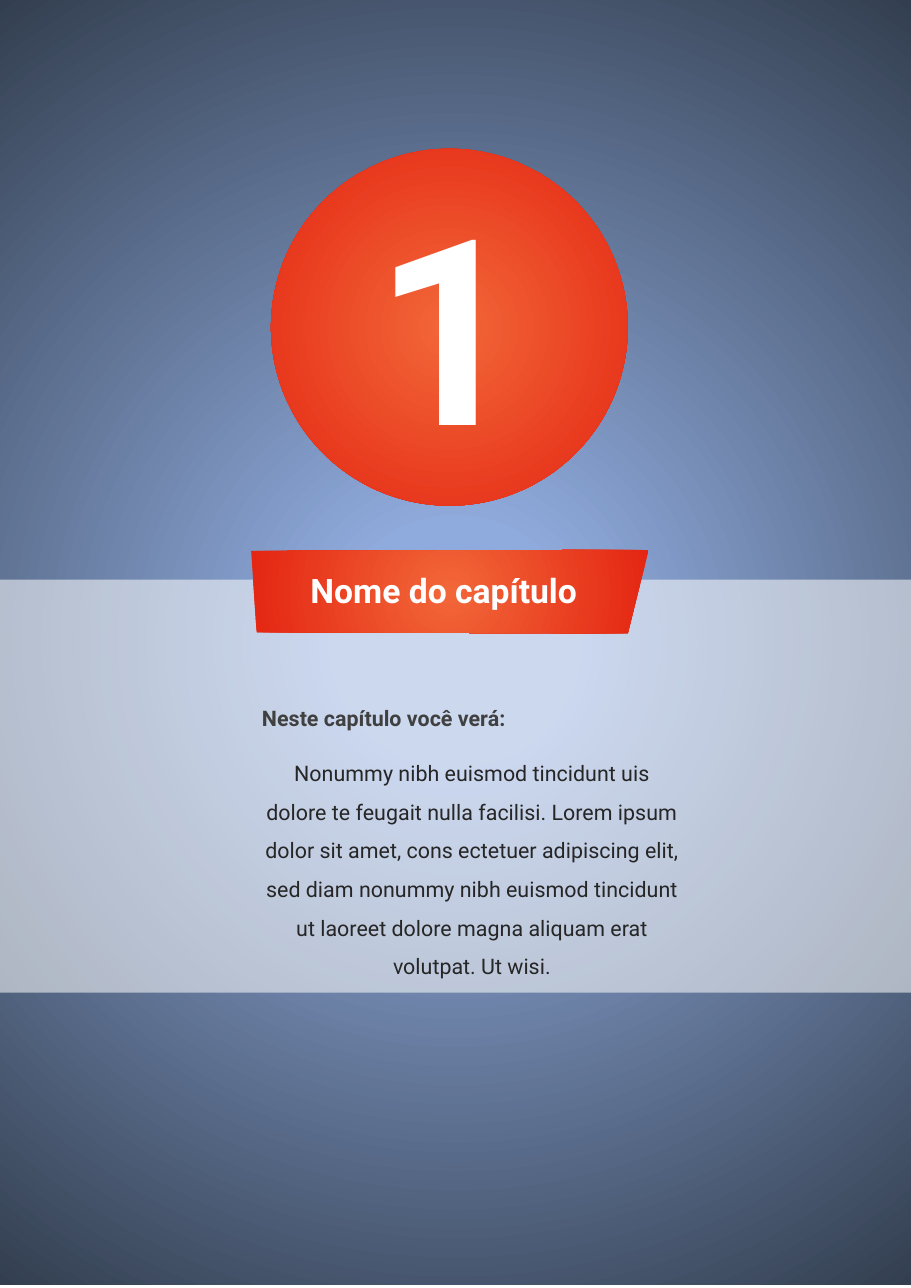
from lxml.etree import SubElement
from pptx import Presentation
from pptx.dml.color import RGBColor
from pptx.enum.shapes import MSO_SHAPE
from pptx.enum.text import PP_ALIGN
from pptx.oxml.ns import qn
from pptx.util import Inches, Pt

# Content
NUMBER = "1"
TITLE = "Nome do capítulo"
INTRO = "Neste capítulo você verá:"
SUMMARY = (
    "Nonummy nibh euismod tincidunt uis dolore te feugait nulla facilisi. "
    "Lorem ipsum dolor sit amet, cons ectetuer adipiscing elit, sed diam "
    "nonummy nibh euismod tincidunt ut laoreet dolore magna aliquam erat "
    "volutpat. Ut wisi."
)

THEME = {
    "font": "Roboto",
    "white": "FFFFFF",
    "intro": "404040",
    "summary": "262626",
    "blue": [(15, "8FAADC"), (100, "333F50")],
    "orange": [(0, "F26739"), (100, "E42612")],
    "number_size": 170,
    "title_size": 22,
    "text_size": 14,
    "band_opacity": 54,
}

# Layout in inches: left, top, width, height
PAGE_SIZE = (8.27, 11.69)
BACKDROP = (0, 0, 8.27, 11.66)
BAND = (0, 5.26, 8.27, 3.75)
RIBBON = [(2.28, 5), (5.89, 4.99), (5.7, 5.75), (2.33, 5.74)]
DISC = (2.46, 1.35, 3.24, 3.24)
SUMMARY_BOX = (2.28, 6.35, 4.01, 2.45)
TITLE_BOX = (2.72, 5.12, 2.79, 0.66)
NUMBER_BOX = (3.3, 1.45, 4.04, 3.15)


def inches(values):
    return [Inches(value) for value in values]


def strip_outline(shape):
    shape.shadow.inherit = False
    shape.line.fill.background()


def fill_radial(shape, stops):
    """Fill a shape with a circular gradient centred on it."""
    shape.fill.gradient()
    gradient = shape._element.spPr.find(qn("a:gradFill"))
    for child in list(gradient):
        gradient.remove(child)
    stop_list = SubElement(gradient, qn("a:gsLst"))
    for position, color in stops:
        stop = SubElement(stop_list, qn("a:gs"), pos=str(position * 1000))
        SubElement(stop, qn("a:srgbClr"), val=color)
    circle = SubElement(gradient, qn("a:path"), path="circle")
    SubElement(circle, qn("a:fillToRect"), l="50000", t="50000", r="50000", b="50000")


def add_plain_shape(page, kind, area):
    shape = page.shapes.add_shape(kind, *inches(area))
    strip_outline(shape)
    return shape


def add_text_frame(page, area):
    frame = page.shapes.add_textbox(*inches(area)).text_frame
    frame.word_wrap = True
    return frame


def add_span(para, text, size, color, bold=True):
    span = para.add_run()
    span.text = text
    span.font.name = THEME["font"]
    span.font.size = Pt(size)
    span.font.bold = bold
    span.font.color.rgb = RGBColor.from_string(color)


def main():
    deck = Presentation()
    deck.slide_width, deck.slide_height = inches(PAGE_SIZE)
    page = deck.slides.add_slide(deck.slide_layouts[6])

    # Backdrop and translucent band
    fill_radial(add_plain_shape(page, MSO_SHAPE.RECTANGLE, BACKDROP), THEME["blue"])
    band = add_plain_shape(page, MSO_SHAPE.RECTANGLE, BAND)
    band.fill.solid()
    band.fill.fore_color.rgb = RGBColor.from_string(THEME["white"])
    color = band._element.spPr.find(qn("a:solidFill")).find(qn("a:srgbClr"))
    SubElement(color, qn("a:alpha"), val=str(THEME["band_opacity"] * 1000))

    # Title ribbon
    start, *corners = [inches(point) for point in RIBBON]
    builder = page.shapes.build_freeform(*start)
    builder.add_line_segments(corners, close=True)
    ribbon = builder.convert_to_shape()
    strip_outline(ribbon)
    fill_radial(ribbon, THEME["orange"])

    # Chapter summary
    frame = add_text_frame(page, SUMMARY_BOX)
    add_span(frame.paragraphs[0], INTRO, THEME["text_size"], THEME["intro"])
    para = frame.add_paragraph()
    para.alignment = PP_ALIGN.CENTER
    para.line_spacing = 1.5
    para.space_before = Pt(11)
    add_span(para, SUMMARY, THEME["text_size"], THEME["summary"], bold=False)

    # Chapter title
    para = add_text_frame(page, TITLE_BOX).paragraphs[0]
    add_span(para, TITLE, THEME["title_size"], THEME["white"])

    # Chapter number on its disc
    fill_radial(add_plain_shape(page, MSO_SHAPE.OVAL, DISC), THEME["orange"])
    para = add_text_frame(page, NUMBER_BOX).paragraphs[0]
    add_span(para, NUMBER, THEME["number_size"], THEME["white"])

    deck.save("out.pptx")


if __name__ == "__main__":
    main()
